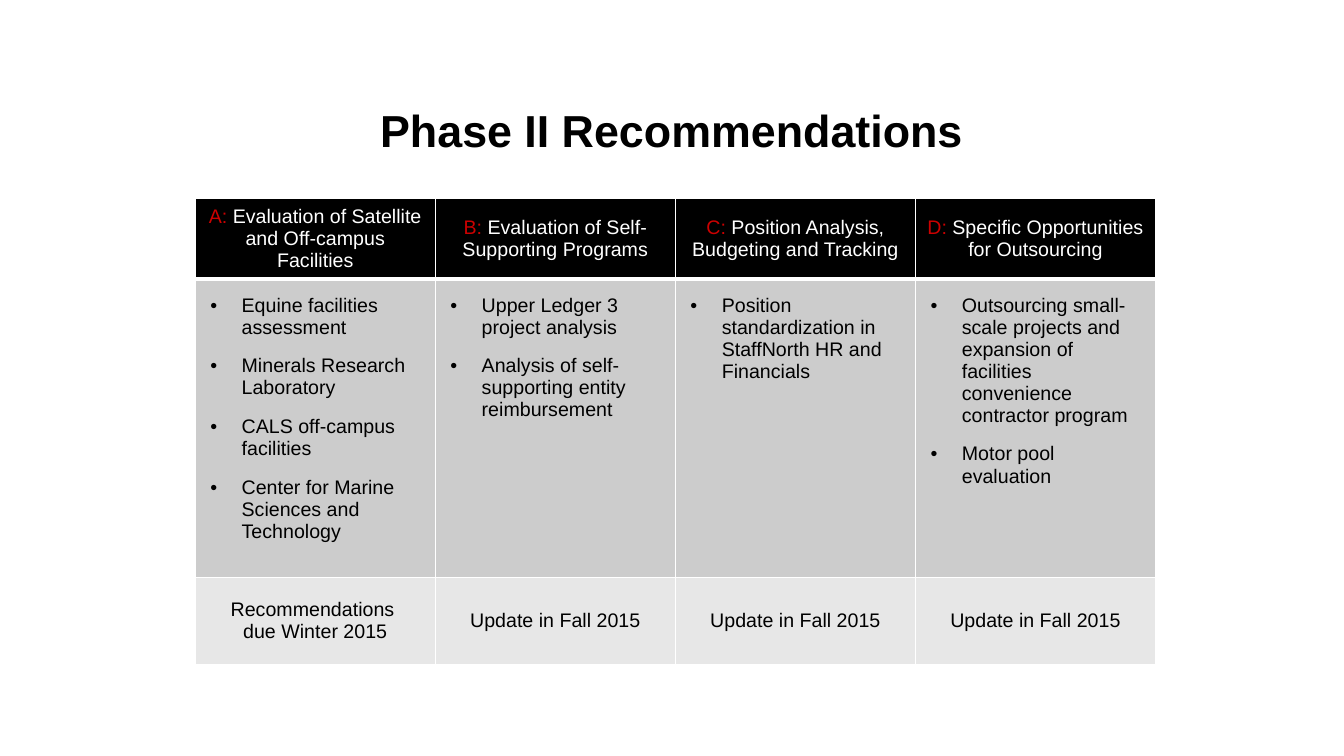
from pptx import Presentation
from pptx.dml.color import RGBColor
from pptx.enum.text import MSO_ANCHOR, PP_ALIGN
from pptx.oxml.ns import qn
from pptx.util import Cm, Pt
from lxml.etree import SubElement

BLACK = RGBColor(0x00, 0x00, 0x00)
WHITE = RGBColor(0xFF, 0xFF, 0xFF)
RED = RGBColor(0xCC, 0x00, 0x00)
GREY = RGBColor(0xCC, 0xCC, 0xCC)
LIGHT_GREY = RGBColor(0xE7, 0xE7, 0xE7)

UPDATE = ["Update in Fall 2015"]
PHASES = [
    ("A:", " Evaluation of Satellite and Off-campus Facilities",
     ["Equine facilities assessment", "Minerals Research Laboratory",
      "CALS off-campus facilities", "Center for Marine Sciences and Technology"],
     ["Recommendations ", "due Winter 2015"]),
    ("B:", " Evaluation of Self-Supporting Programs",
     ["Upper Ledger 3 project analysis",
      "Analysis of self-supporting entity reimbursement"], UPDATE),
    ("C:", " Position Analysis, Budgeting and Tracking",
     ["Position standardization in StaffNorth HR and Financials"], UPDATE),
    ("D:", " Specific Opportunities for Outsourcing",
     ["Outsourcing small-scale projects and expansion of facilities "
      "convenience contractor program", "Motor pool evaluation"], UPDATE),
]


class SlideBuilder:
    font = "Arial"
    size = 14

    def __init__(self, slide):
        self.s = slide

    def run(self, p, text, color=BLACK, size=None, bold=False):
        r = p.add_run()
        r.text = text
        r.font.name = self.font
        r.font.size = Pt(size or self.size)
        r.font.bold = bold
        r.font.color.rgb = color

    def title(self, text, left, top, width, height):
        tb = self.s.shapes.add_textbox(Cm(left), Cm(top), Cm(width), Cm(height))
        tf = tb.text_frame
        tf.word_wrap = True
        tf.vertical_anchor = MSO_ANCHOR.MIDDLE
        p = tf.paragraphs[0]
        p.alignment = PP_ALIGN.CENTER
        self.run(p, text, size=32, bold=True)

    def table(self, left, top, col_width, row_heights, cols):
        frame = self.s.shapes.add_table(
            len(row_heights), cols, Cm(left), Cm(top),
            Cm(col_width * cols), Cm(sum(row_heights)))
        table = frame.table
        table.first_row = False
        table.horz_banding = False
        for col in table.columns:
            col.width = Cm(col_width)
        for row, height in zip(table.rows, row_heights):
            row.height = Cm(height)
        return table

    def cell(self, cell, fill, top=1, bottom=1):
        tc_pr = cell._tc.get_or_add_tcPr()
        for side, width in (("L", 1), ("R", 1), ("T", top), ("B", bottom)):
            ln = SubElement(tc_pr, qn(f"a:ln{side}"), w=str(Pt(width)))
            solid = SubElement(ln, qn("a:solidFill"))
            SubElement(solid, qn("a:srgbClr"), val=str(WHITE))
        cell.fill.solid()
        cell.fill.fore_color.rgb = fill

    def centered(self, cell):
        cell.vertical_anchor = MSO_ANCHOR.MIDDLE
        p = cell.text_frame.paragraphs[0]
        p.alignment = PP_ALIGN.CENTER
        return p

    def header(self, cell, letter, text):
        self.cell(cell, BLACK, bottom=3)
        p = self.centered(cell)
        self.run(p, letter, RED)
        self.run(p, text, WHITE)

    def bullets(self, cell, items):
        self.cell(cell, GREY, top=3)
        cell.margin_left = cell.margin_right = Cm(0.38)
        cell.margin_top = cell.margin_bottom = Cm(0.38)
        tf = cell.text_frame
        for i, item in enumerate(items):
            p = tf.add_paragraph() if i else tf.paragraphs[0]
            p_pr = p._p.get_or_add_pPr()
            p_pr.set("marL", str(Cm(0.79)))
            p_pr.set("indent", str(Cm(-0.79)))
            SubElement(p_pr, qn("a:buFont"), typeface=self.font)
            SubElement(p_pr, qn("a:buChar"), char="•")
            p.space_after = Pt(12)
            self.run(p, item)

    def due(self, cell, lines):
        self.cell(cell, LIGHT_GREY)
        p = self.centered(cell)
        p.space_after = Pt(12)
        for i, line in enumerate(lines):
            if i:
                p.add_line_break()
            self.run(p, line)


def main():
    prs = Presentation()
    prs.slide_width = Cm(33.87)
    prs.slide_height = Cm(19.05)
    s = SlideBuilder(prs.slides.add_slide(prs.slide_layouts[6]))

    s.title("Phase II Recommendations", 4.23, 1.85, 25.4, 2.84)
    table = s.table(4.92, 5, 6.05, (1.94, 7.51, 2.2), len(PHASES))
    for col, (letter, heading, items, due) in enumerate(PHASES):
        s.header(table.cell(0, col), letter, heading)
        s.bullets(table.cell(1, col), items)
        s.due(table.cell(2, col), due)

    prs.save("out.pptx")


if __name__ == "__main__":
    main()
